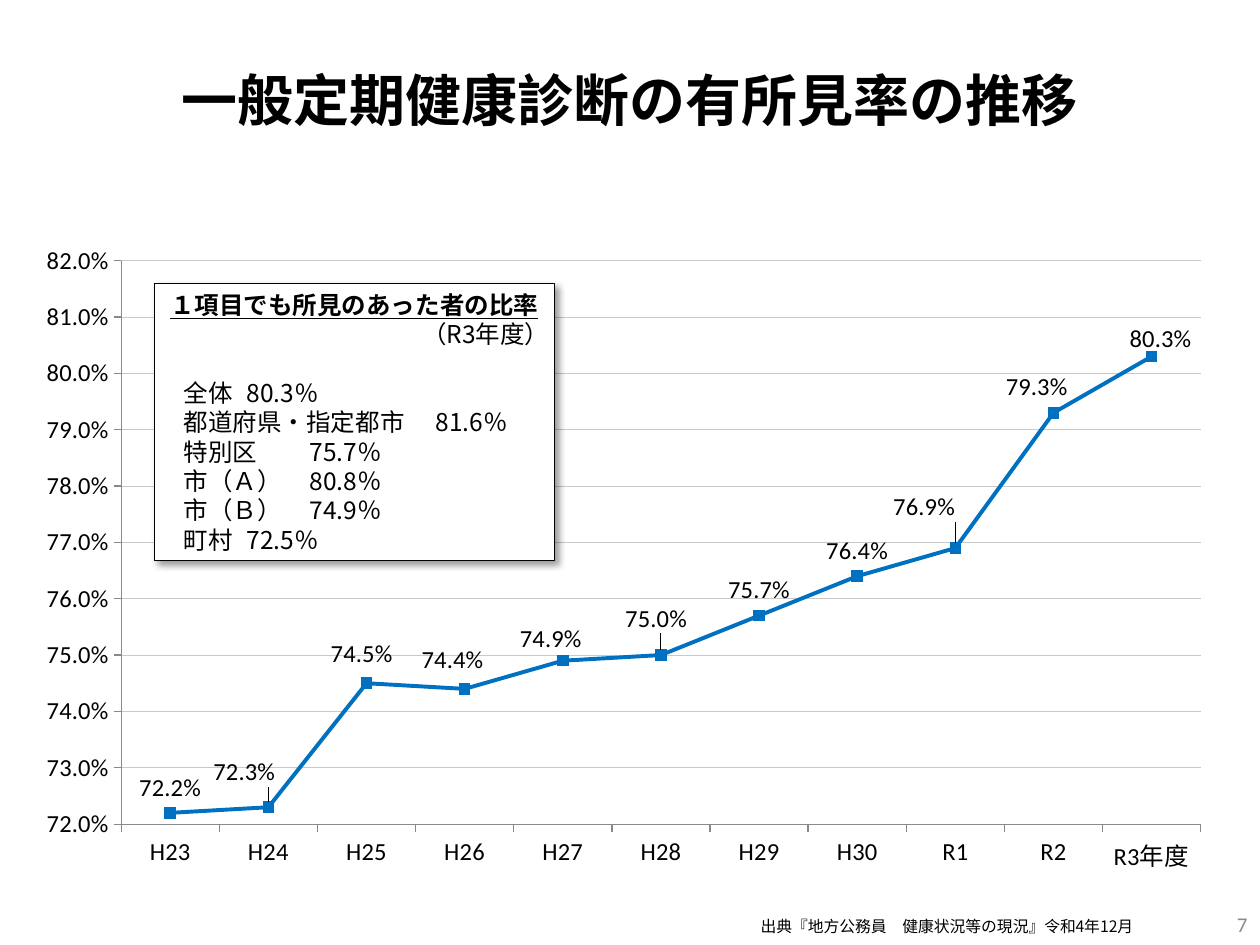
from lxml.etree import SubElement
from pptx import Presentation
from pptx.chart.data import CategoryChartData
from pptx.dml.color import RGBColor
from pptx.enum.chart import XL_CHART_TYPE, XL_LABEL_POSITION, XL_MARKER_STYLE, XL_TICK_MARK
from pptx.enum.shapes import MSO_SHAPE
from pptx.enum.text import MSO_ANCHOR, PP_ALIGN
from pptx.oxml import parse_xml
from pptx.oxml.ns import nsdecls, qn
from pptx.util import Pt

COLORS = {"ink": "000000", "paper": "FFFFFF", "line": "0070C0", "grid": "C9C9C9",
          "axis": "898989", "number": "898989"}
JAPANESE = "Noto Sans CJK JP"
LABEL_SHIFTS = {1: (-0.02, -0.015), 2: (-0.004, -0.006), 3: (-0.01, -0.006),
                4: (-0.01, 0.006), 5: (-0.004, -0.017), 8: (-0.026, -0.024),
                9: (-0.014, 0), 10: (0.0075, 0.012)}
RATES = {"H23": 0.722, "H24": 0.723, "H25": 0.745, "H26": 0.744, "H27": 0.749,
         "H28": 0.75, "H29": 0.757, "H30": 0.764, "R1": 0.769, "R2": 0.793,
         "R3年度": 0.803}
GROUPS = {"全体": "80.3％", "都道府県・指定都市": "81.6％", "特別区": "75.7％",
          "市（Ａ）": "80.8％", "市（Ｂ）": "74.9％", "町村": "72.5％"}


class SlideWriter:
    """Holds the style and the current slide."""

    def __init__(self, slide):
        self.slide = slide

    def color(self, name):
        """Return a named colour."""
        return RGBColor.from_string(COLORS[name])

    def style(self, para, size, font=JAPANESE, color="ink", bold=False, underline=False):
        """Format every run of a paragraph."""
        for span in para.runs:
            span.font.size = Pt(size)
            span.font.name = font
            span.font.bold = bold
            span.font.underline = underline
            span.font.color.rgb = self.color(color)
            east = SubElement(span.font._element, qn("a:ea"))
            east.set("typeface", JAPANESE)

    def text(self, frame, words, size, align=PP_ALIGN.LEFT, anchor=MSO_ANCHOR.MIDDLE, **look):
        """Add one line of text in a wrapping text box."""
        box = self.slide.shapes.add_textbox(*map(Pt, frame))
        box.text_frame.word_wrap = True
        box.text_frame.vertical_anchor = anchor
        box.text_frame.text = words
        para = box.text_frame.paragraphs[0]
        para.alignment = align
        self.style(para, size, **look)

    def panel(self, frame, heading, period, rows):
        """Add the shadowed panel with one tabbed line per group."""
        box = self.slide.shapes.add_shape(MSO_SHAPE.ROUNDED_RECTANGLE, *map(Pt, frame))
        box.adjustments[0] = 0
        box.fill.solid()
        box.fill.fore_color.rgb = self.color("paper")
        box.line.color.rgb = self.color("ink")
        box.line.width = Pt(0.5)
        box._element.spPr.append(parse_xml(
            f'<a:effectLst {nsdecls("a")}><a:outerShdw blurRad="{Pt(4)}" dist="{Pt(3)}" '
            f'dir="2700000" algn="tl" rotWithShape="0"><a:srgbClr val="{COLORS["ink"]}">'
            '<a:alpha val="40000"/></a:srgbClr></a:outerShdw></a:effectLst>'))
        content = box.text_frame
        content.word_wrap = True
        content.vertical_anchor = MSO_ANCHOR.MIDDLE
        content.margin_left = content.margin_right = Pt(3)
        content.margin_top = content.margin_bottom = Pt(3)
        lines = [heading, period] + [f"{name}\t{rate}" for name, rate in rows.items()]
        content.text = "\n".join(lines)
        for index, para in enumerate(content.paragraphs):
            para.line_spacing = Pt(16.75)
            para.alignment = PP_ALIGN.LEFT
            self.style(para, 14, bold=index == 0, underline=index == 0)
            if index == 2:
                para.space_before = Pt(16.75)
            if index >= 2:
                properties = para._p.get_or_add_pPr()
                properties.set("marL", str(Pt(14)))
                properties.set("indent", "0")
                stops = SubElement(properties, qn("a:tabLst"))
                SubElement(stops, qn("a:tab"), pos=str(Pt(158)), algn="l")
        content.paragraphs[0].alignment = PP_ALIGN.CENTER
        content.paragraphs[1].alignment = PP_ALIGN.RIGHT

    def layout(self, x, y, extra=""):
        """Return a manual chart layout element."""
        return parse_xml(f'<c:layout {nsdecls("c")}><c:manualLayout>{extra}'
                         f'<c:x val="{x}"/><c:y val="{y}"/></c:manualLayout></c:layout>')

    def chart_font(self, font):
        """Format the text of one chart part."""
        font.name = "Calibri"
        font.size = Pt(14)
        font.color.rgb = self.color("ink")

    def line_chart(self, frame, rates, shifts):
        """Add the line chart with shifted value labels."""
        data = CategoryChartData(number_format="0.0%")
        data.categories = list(rates)
        data.add_series("有所見率", list(rates.values()))
        chart = self.slide.shapes.add_chart(
            XL_CHART_TYPE.LINE_MARKERS, *map(Pt, frame), data).chart
        chart.has_title = chart.has_legend = False
        self.chart_font(chart.font)
        self.axes(chart)
        plot = chart.plots[0]
        plot.vary_by_categories = False
        series = plot.series[0]
        series.smooth = False
        series.format.line.color.rgb = self.color("line")
        series.format.line.width = Pt(2.25)
        series.marker.style = XL_MARKER_STYLE.SQUARE
        series.marker.size = 6
        series.marker.format.fill.solid()
        series.marker.format.fill.fore_color.rgb = self.color("line")
        series.marker.format.line.color.rgb = self.color("line")
        labels = series.data_labels
        labels.show_value = True
        labels.number_format = "0.0%"
        labels.number_format_is_linked = False
        labels.position = XL_LABEL_POSITION.ABOVE
        self.chart_font(labels.font)
        for index, shift in shifts.items():
            label = series.points[index].data_label
            self.chart_font(label.font)
            label.position = XL_LABEL_POSITION.ABOVE
        for item in labels._element.findall(qn("c:dLbl")):
            number = item.find(qn("c:idx"))
            number.addnext(self.layout(*shifts[int(number.get("val"))]))

    def axes(self, chart):
        """Format both axes and fix the plot area."""
        for axis in (chart.category_axis, chart.value_axis):
            axis.major_tick_mark = XL_TICK_MARK.OUTSIDE
            axis.minor_tick_mark = XL_TICK_MARK.NONE
            axis.format.line.color.rgb = self.color("axis")
            self.chart_font(axis.tick_labels.font)
        axis = chart.value_axis
        axis.minimum_scale, axis.maximum_scale, axis.major_unit = 0.72, 0.82, 0.01
        axis.tick_labels.number_format = "0.0%"
        axis.tick_labels.number_format_is_linked = False
        axis.has_major_gridlines = True
        axis.major_gridlines.format.line.color.rgb = self.color("grid")
        axis.major_gridlines.format.line.width = Pt(0.5)
        area = chart._chartSpace.chart.plotArea
        for old in area.findall(qn("c:layout")):
            area.remove(old)
        place = self.layout(0.08, 0.04, '<c:layoutTarget val="inner"/>'
                            '<c:xMode val="edge"/><c:yMode val="edge"/>')
        for tag, size in (("c:w", "0.9"), ("c:h", "0.86")):
            SubElement(place[0], qn(tag), val=size)
        area.insert(0, place)


def main():
    """Build and save the slide."""
    deck = Presentation()
    deck.slide_width, deck.slide_height = Pt(720), Pt(540)
    page = SlideWriter(deck.slides.add_slide(deck.slide_layouts[6]))
    page.text((0, 20, 720, 73.5), "一般定期健康診断の有所見率の推移", 32,
              align=PP_ALIGN.CENTER, font="Arial", bold=True)
    page.line_chart((14.4, 134, 685.5, 374.5), RATES, LABEL_SHIFTS)
    page.panel((88, 162, 229, 158.5), "１項目でも所見のあった者の比率", "（R3年度）", GROUPS)
    page.text((552, 513.5, 168, 29), "7", 12, align=PP_ALIGN.RIGHT,
              font="Calibri", color="number")
    page.text((427.5, 518, 243, 22), "出典『地方公務員　健康状況等の現況』令和4年12月", 9)
    deck.save("out.pptx")


if __name__ == "__main__":
    main()
